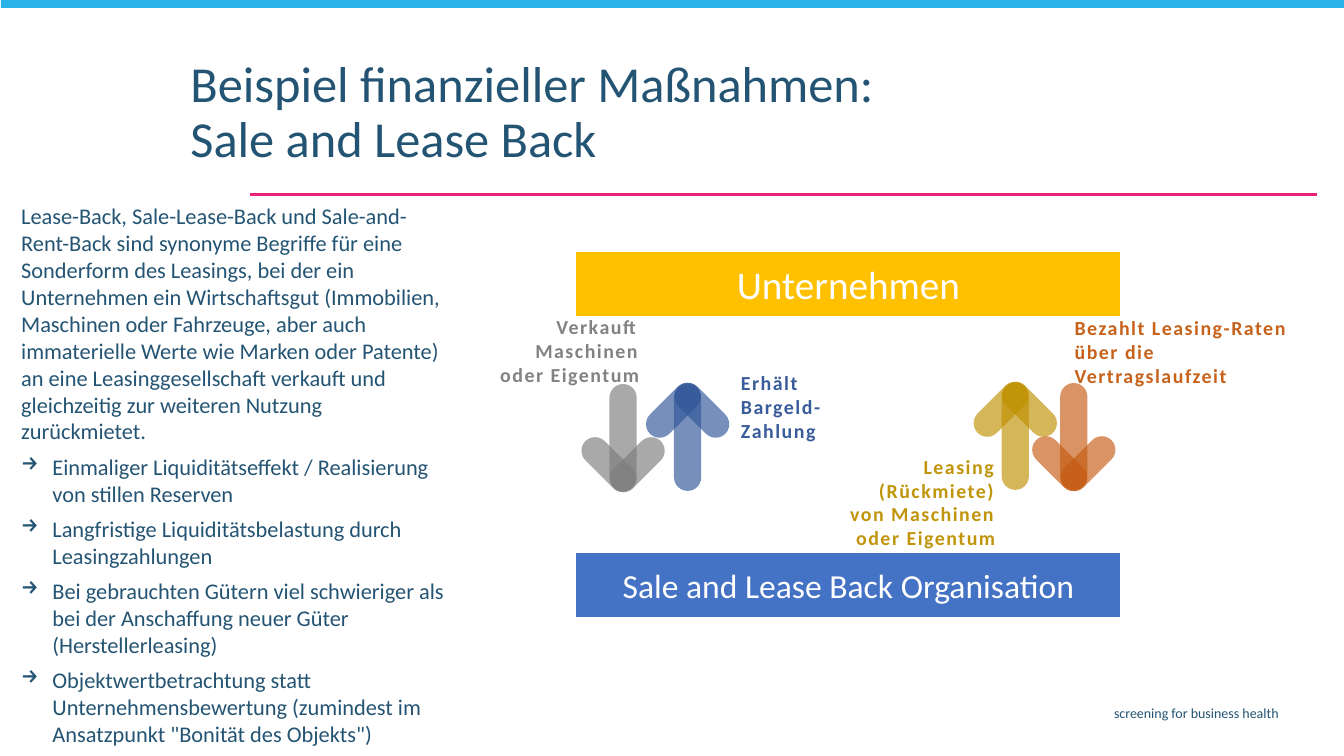
from dataclasses import dataclass

from lxml import etree
from pptx import Presentation
from pptx.dml.color import RGBColor
from pptx.enum.shapes import MSO_CONNECTOR, MSO_SHAPE
from pptx.enum.text import MSO_ANCHOR, PP_ALIGN
from pptx.oxml.ns import qn
from pptx.util import Inches, Pt

LEFT, CENTER, RIGHT = PP_ALIGN.LEFT, PP_ALIGN.CENTER, PP_ALIGN.RIGHT
TOP, MIDDLE = MSO_ANCHOR.TOP, MSO_ANCHOR.MIDDLE
RECT, PILL = MSO_SHAPE.RECTANGLE, MSO_SHAPE.ROUNDED_RECTANGLE


@dataclass(frozen=True)
class Theme:
    font: str = "Calibri"
    text: str = "245473"
    white: str = "FFFFFF"
    band: str = "29B3E8"
    rule: str = "EC2179"
    company: str = "FFC000"
    lessor: str = "4472C4"
    title_size: float = 36
    company_size: float = 28
    lessor_size: float = 24
    body_size: float = 16
    label_size: float = 14.2
    footer_size: float = 10


theme = Theme()
prs = Presentation()
prs.slide_width, prs.slide_height = Inches(13.33), Inches(7.5)
s = prs.slides.add_slide(prs.slide_layouts[6])


def add_shape(kind, left, top, width, height, color):
    sp = s.shapes.add_shape(kind, Inches(left), Inches(top), Inches(width), Inches(height))
    sp.shadow.inherit = False
    sp.fill.solid()
    sp.fill.fore_color.rgb = RGBColor.from_string(color)
    sp.line.fill.background()
    return sp


def write(tf, paragraphs, size, color, align=LEFT, anchor=TOP, bold=False):
    """Fill a text frame; a vertical tab in a paragraph is a line break."""
    tf.word_wrap = True
    tf.vertical_anchor = anchor
    tf.text = "\n".join(paragraphs)
    for p in tf.paragraphs:
        p.alignment = align
        p.font.name, p.font.size, p.font.bold = theme.font, Pt(size), bold
        p.font.color.rgb = RGBColor.from_string(color)


# Page frame
add_shape(RECT, 0.01, -0.02, 13.34, 0.1, theme.band)
rule = s.shapes.add_connector(MSO_CONNECTOR.STRAIGHT, Inches(2.48), Inches(1.93), Inches(13.06), Inches(1.93))
rule.line.color.rgb = RGBColor.from_string(theme.rule)
rule.line.width = Pt(1.5)
etree.SubElement(rule._element.spPr, qn("a:effectLst"))

footer = s.shapes.add_textbox(Inches(3.65), Inches(6.94), Inches(9.13), Inches(0.29))
write(footer.text_frame, ["screening for business health"], theme.footer_size, theme.text, RIGHT)

title = s.shapes.add_textbox(Inches(1.79), Inches(0.54), Inches(7.67), Inches(0.76))
write(title.text_frame, ["Beispiel finanzieller Maßnahmen:\vSale and Lease Back"], theme.title_size, theme.text)
title.text_frame.paragraphs[0].line_spacing = 0.9

# Explanation with arrow bullets
explanation = [
    "Lease-Back, Sale-Lease-Back und Sale-and-Rent-Back sind synonyme Begriffe für eine "
    "Sonderform des Leasings, bei der ein Unternehmen ein Wirtschaftsgut (Immobilien, "
    "Maschinen oder Fahrzeuge, aber auch immaterielle Werte wie Marken oder Patente) an eine "
    "Leasinggesellschaft verkauft und gleichzeitig zur weiteren Nutzung zurückmietet.",
    "Einmaliger Liquiditätseffekt / Realisierung von stillen Reserven",
    "Langfristige Liquiditätsbelastung durch Leasingzahlungen",
    "Bei gebrauchten Gütern viel schwieriger als bei der Anschaffung neuer Güter (Herstellerleasing)",
    "Objektwertbetrachtung statt Unternehmensbewertung (zumindest im Ansatzpunkt "
    '"Bonität des Objekts")',
]
body = s.shapes.add_textbox(Inches(0.12), Inches(1.97), Inches(4.42), Inches(5.27))
tf = body.text_frame
tf.margin_left = tf.margin_right = Inches(0.09)
tf.margin_top = tf.margin_bottom = Inches(0.04)
write(tf, explanation, theme.body_size, theme.text)
for p in tf.paragraphs[1:]:
    p.space_before = Pt(6)
    pPr = p._p.get_or_add_pPr()
    pPr.set("marL", str(Inches(0.31)))
    pPr.set("indent", str(-Inches(0.31)))
    bullet = etree.Element(qn("a:buChar"), char="→")
    pPr.find(qn("a:defRPr")).addprevious(bullet)

# Flow arrows: a shaft and two barbs around the tip; direction 1 is down, -1 is up
SHAFT, BARB, THICK = 1.06, 0.66, 0.27
for x, y, direction, color in [
    (6.82, 4.34, -1, "2F5597"),
    (6.18, 4.34, 1, "7C7C7C"),
    (10.65, 4.33, 1, "C55A11"),
    (10.07, 4.33, -1, "BF9000"),
]:
    barb_y = y + 0.27 * direction
    for cx, cy, length, angle in [
        (x, y, SHAFT, 90),
        (x - 0.14, barb_y, BARB, 45),
        (x + 0.14, barb_y, BARB, 135),
    ]:
        bar = add_shape(PILL, cx - length / 2, cy - THICK / 2, length, THICK, color)
        bar.adjustments[0] = 0.5
        bar.rotation = angle * direction % 360
        srgb = bar._element.spPr.find(qn("a:solidFill")).find(qn("a:srgbClr"))
        etree.SubElement(srgb, qn("a:alpha"), val="65000")

# Arrow labels
for left, top, width, height, label, color, align in [
    (10.56, 3.2, 2.53, 0.58, "Bezahlt Leasing-Raten\vüber die\vVertragslaufzeit", "C7621B", LEFT),
    (7.89, 4.57, 2.08, 0.82, "Leasing\v(Rückmiete)\vvon Maschinen\voder Eigentum", "C1950B", RIGHT),
    (7.25, 3.74, 1.61, 0.58, "Erhält\vBargeld-\vZahlung", "395C9B", LEFT),
    (4.78, 3.19, 1.66, 0.58, "Verkauft\vMaschinen\voder Eigentum", "828282", RIGHT),
]:
    box = s.shapes.add_textbox(Inches(left), Inches(top), Inches(width), Inches(height))
    write(box.text_frame, [label], theme.label_size, color, align, MIDDLE, True)
    for r in box.text_frame.paragraphs[0].runs:
        r._r.get_or_add_rPr().set("spc", "110")

# The two parties
for top, name, size, color in [
    (2.49, "Unternehmen", theme.company_size, theme.company),
    (5.48, "Sale and Lease Back Organisation", theme.lessor_size, theme.lessor),
]:
    party = add_shape(RECT, 5.71, top, 5.41, 0.65, color)
    party.line.color.rgb = RGBColor.from_string(theme.white)
    party.line.width = Pt(1)
    write(party.text_frame, [name], size, theme.white, CENTER, MIDDLE)

prs.save("out.pptx")
